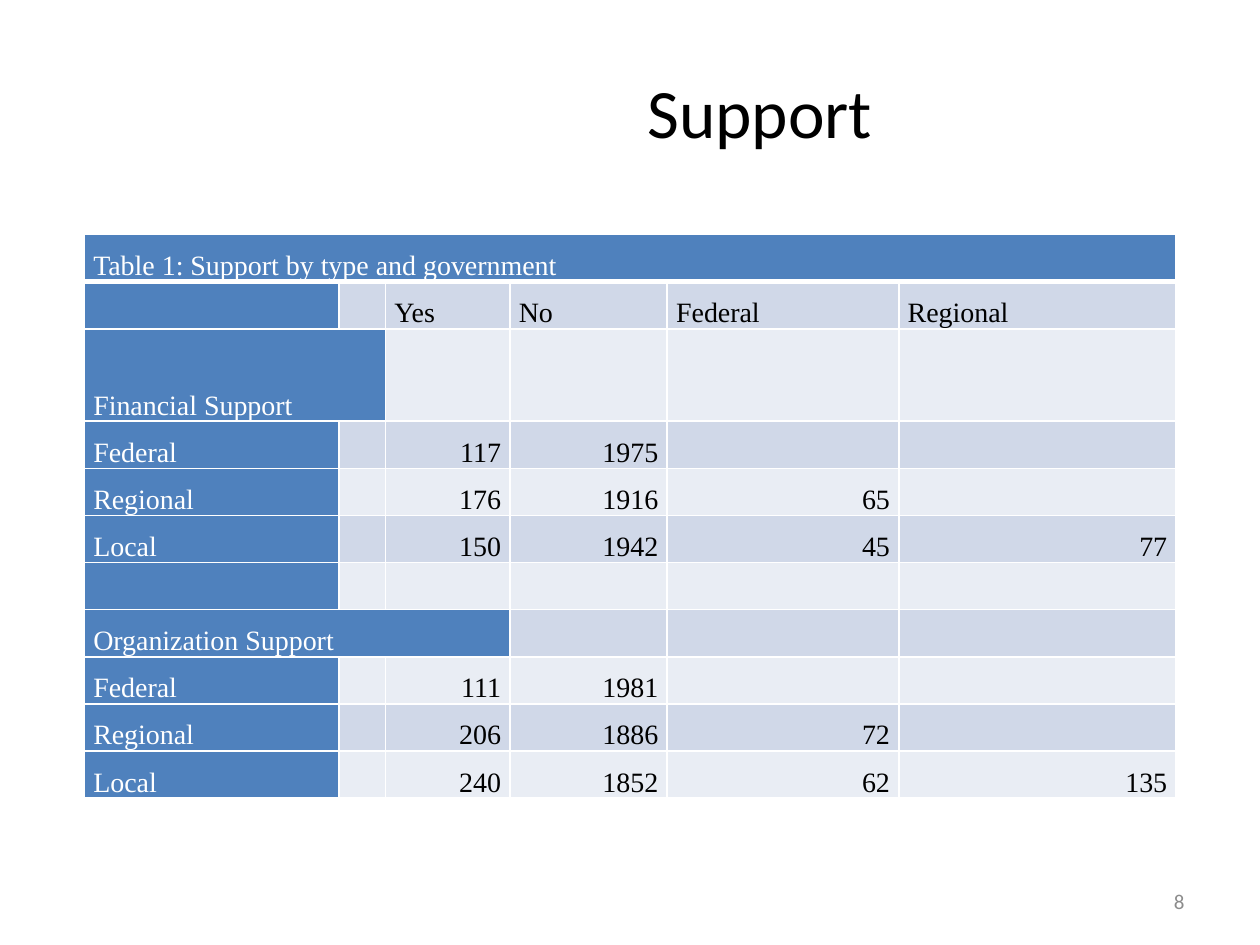
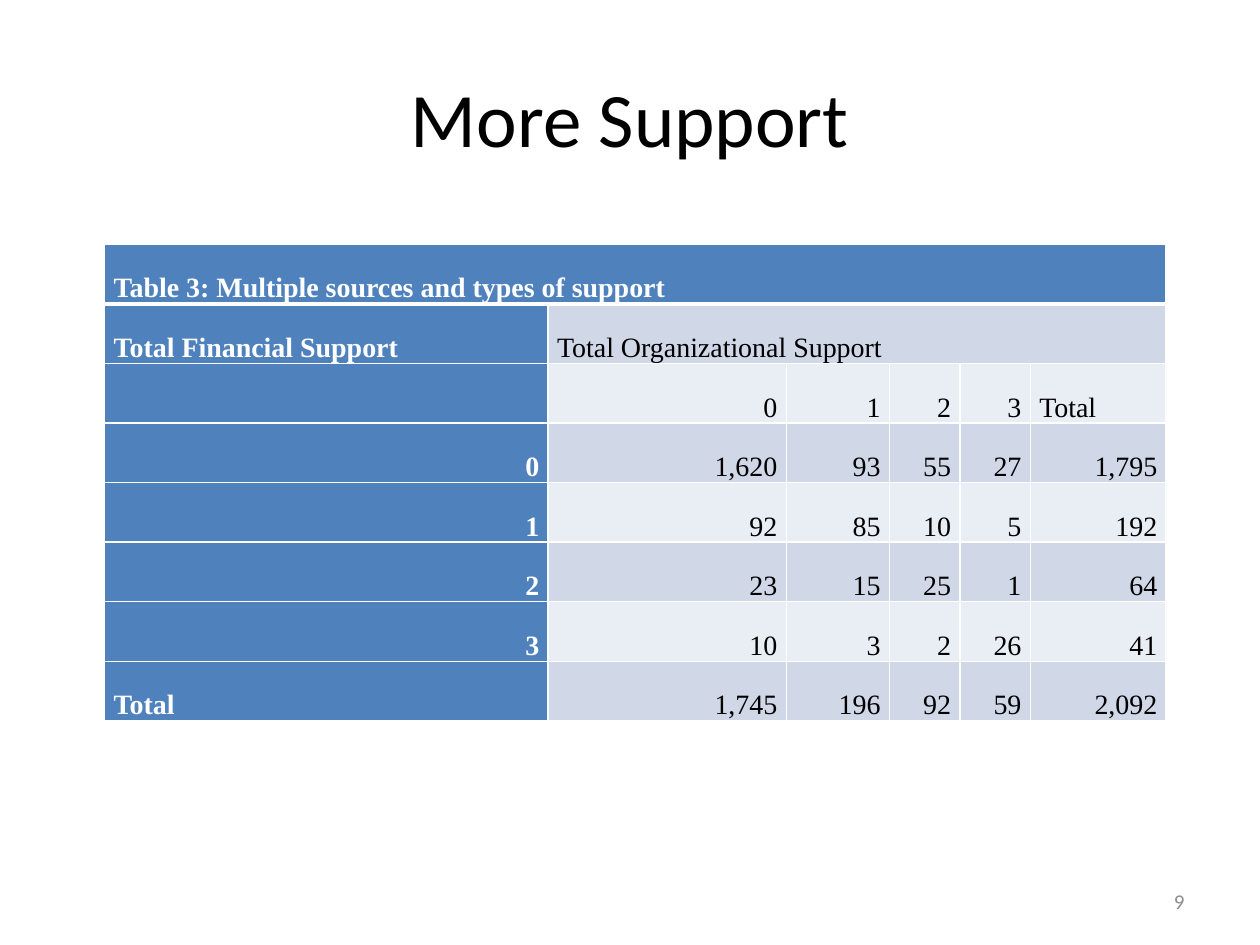
"""Build two slides of support tables that share one title, table and page number style."""
from dataclasses import dataclass

from lxml import etree
from pptx import Presentation
from pptx.dml.color import RGBColor
from pptx.enum.text import MSO_ANCHOR, MSO_AUTO_SIZE, PP_ALIGN
from pptx.oxml.ns import qn
from pptx.util import Cm, Pt

LEFT, CENTER, RIGHT = PP_ALIGN.LEFT, PP_ALIGN.CENTER, PP_ALIGN.RIGHT
MIDDLE, BOTTOM = MSO_ANCHOR.MIDDLE, MSO_ANCHOR.BOTTOM
NO_AUTOFIT = MSO_AUTO_SIZE.NONE

COLORS = {
    "label": "4F81BD",
    "odd_band": "D0D8E8",
    "even_band": "E9EDF4",
    "grid": "FFFFFF",
    "label_text": "FFFFFF",
    "text": "000000",
    "page_number": "8C8C8C",
}
HEADING_FONT, TABLE_FONT = "Calibri", "Times New Roman"
TITLE_ONLY = 5
PAGE_NUMBER_BOX = (18.2, 17.65, 5.93, 1.02)


@dataclass(frozen=True)
class SupportTable:
    left: float
    top: float
    columns: tuple[float, ...]
    row_heights: tuple[float, ...]
    rows: tuple[tuple[str, ...], ...]
    merges: tuple[tuple[int, int, int], ...]
    bold_labels: bool


@dataclass(frozen=True)
class SupportSlide:
    title: str
    title_box: tuple[float, float, float, float]
    title_size: float
    number: int
    table: SupportTable


SUPPORT_BY_TYPE = SupportTable(
    left=1.7,
    top=4.73,
    columns=(5.13, 0.94, 2.51, 3.17, 4.67, 5.59),
    row_heights=(0.95, 0.95, 1.86) + (0.95,) * 8,
    rows=(
        ("Table 1: Support by type and government", "", "", "", "", ""),
        ("", "", "Yes", "No", "Federal", "Regional"),
        ("Financial Support", "", "", "", "", ""),
        ("Federal", "", "117", "1975", "", ""),
        ("Regional", "", "176", "1916", "65", ""),
        ("Local", "", "150", "1942", "45", "77"),
        ("", "", "", "", "", ""),
        ("Organization Support", "", "", "", "", ""),
        ("Federal", "", "111", "1981", "", ""),
        ("Regional", "", "206", "1886", "72", ""),
        ("Local", "", "240", "1852", "62", "135"),
    ),
    merges=((0, 0, 5), (2, 0, 1), (7, 0, 2)),
    bold_labels=False,
)

MULTIPLE_SOURCES = SupportTable(
    left=2.11,
    top=4.93,
    columns=(8.94, 4.8, 2.08, 1.42, 1.42, 2.74),
    row_heights=(1.2,) * 8,
    rows=(
        ("Table 3: Multiple sources and types of support", "", "", "", "", ""),
        ("Total Financial Support", "Total Organizational Support", "", "", "", ""),
        ("", "0", "1", "2", "3", "Total"),
        ("0", "1,620", "93", "55", "27", "1,795"),
        ("1", "92", "85", "10", "5", "192"),
        ("2", "23", "15", "25", "1", "64"),
        ("3", "10", "3", "2", "26", "41"),
        ("Total", "1,745", "196", "92", "59", "2,092"),
    ),
    merges=((0, 0, 5), (1, 1, 5)),
    bold_labels=True,
)

SLIDES = (
    SupportSlide("Support", (6.5, 1.5, 17.63, 1.45), 39.6, 8, SUPPORT_BY_TYPE),
    SupportSlide("More Support", (1.27, 0.76, 22.86, 3.18), 44, 9, MULTIPLE_SOURCES),
)


def style_paragraph(paragraph, font_name: str, size: float, color: str, align, bold: bool = False) -> None:
    """Set the font and alignment of a whole paragraph."""
    paragraph.alignment = align
    font = paragraph.font
    font.name, font.size, font.bold = font_name, Pt(size), bold
    font.color.rgb = RGBColor.from_string(COLORS[color])


def draw_grid(cell, row: int) -> None:
    """Line a cell in white, with a thick rule below the table's heading."""
    properties = cell._tc.get_or_add_tcPr()
    for side in ("L", "R", "T", "B"):
        under_heading = (row, side) in ((0, "B"), (1, "T"))
        line = etree.SubElement(properties, qn(f"a:ln{side}"), w=str(Pt(3 if under_heading else 1)))
        fill = etree.SubElement(line, qn("a:solidFill"))
        etree.SubElement(fill, qn("a:srgbClr"), val=COLORS["grid"])


def fill_cell(cell, text: str, row: int, is_label: bool, bold: bool) -> None:
    """Write one table cell with its band colour, aligning numbers right."""
    draw_grid(cell, row)
    band = "label" if is_label else "odd_band" if row % 2 else "even_band"
    cell.fill.solid()
    cell.fill.fore_color.rgb = RGBColor.from_string(COLORS[band])
    cell.margin_left = cell.margin_right = Cm(0.18)
    cell.margin_top = cell.margin_bottom = 0
    cell.vertical_anchor = BOTTOM
    if text:
        cell.text = text
    paragraph = cell.text_frame.paragraphs[0]
    paragraph.line_spacing = 1.07
    align = RIGHT if text.replace(",", "").isdigit() else LEFT
    style_paragraph(paragraph, TABLE_FONT, 16, "label_text" if is_label else "text", align, bold)


def add_support_table(slide, spec_table: SupportTable) -> None:
    """Add a table whose first row and first column hold the labels."""
    table = slide.shapes.add_table(
        len(spec_table.rows), len(spec_table.columns),
        Cm(spec_table.left), Cm(spec_table.top),
        Cm(sum(spec_table.columns)), Cm(sum(spec_table.row_heights)),
    ).table
    table.first_row = table.horz_banding = False
    for column, width in zip(table.columns, spec_table.columns):
        column.width = Cm(width)
    for table_row, height in zip(table.rows, spec_table.row_heights):
        table_row.height = Cm(height)
    for row, first, last in spec_table.merges:
        table.cell(row, first).merge(table.cell(row, last))
    for row, texts in enumerate(spec_table.rows):
        for column, text in enumerate(texts):
            is_label = row == 0 or column == 0
            fill_cell(table.cell(row, column), text, row, is_label, is_label and spec_table.bold_labels)


def add_title(slide, content: SupportSlide) -> None:
    """Place and format the title placeholder."""
    title = slide.shapes.title
    title.left, title.top, title.width, title.height = map(Cm, content.title_box)
    frame = title.text_frame
    frame.text = content.title
    frame.auto_size = NO_AUTOFIT
    frame.vertical_anchor = MIDDLE
    style_paragraph(frame.paragraphs[0], HEADING_FONT, content.title_size, "text", CENTER)


def add_page_number(slide, number: int) -> None:
    """Write the page number at the bottom right."""
    frame = slide.shapes.add_textbox(*map(Cm, PAGE_NUMBER_BOX)).text_frame
    frame.word_wrap = True
    frame.vertical_anchor = MIDDLE
    frame.text = str(number)
    style_paragraph(frame.paragraphs[0], HEADING_FONT, 12, "page_number", RIGHT)


def main() -> None:
    """Build and save the presentation."""
    presentation = Presentation()
    presentation.slide_width, presentation.slide_height = Cm(25.4), Cm(19.05)
    for content in SLIDES:
        slide = presentation.slides.add_slide(presentation.slide_layouts[TITLE_ONLY])
        add_title(slide, content)
        add_support_table(slide, content.table)
        add_page_number(slide, content.number)
    presentation.save("out.pptx")


if __name__ == "__main__":
    main()
